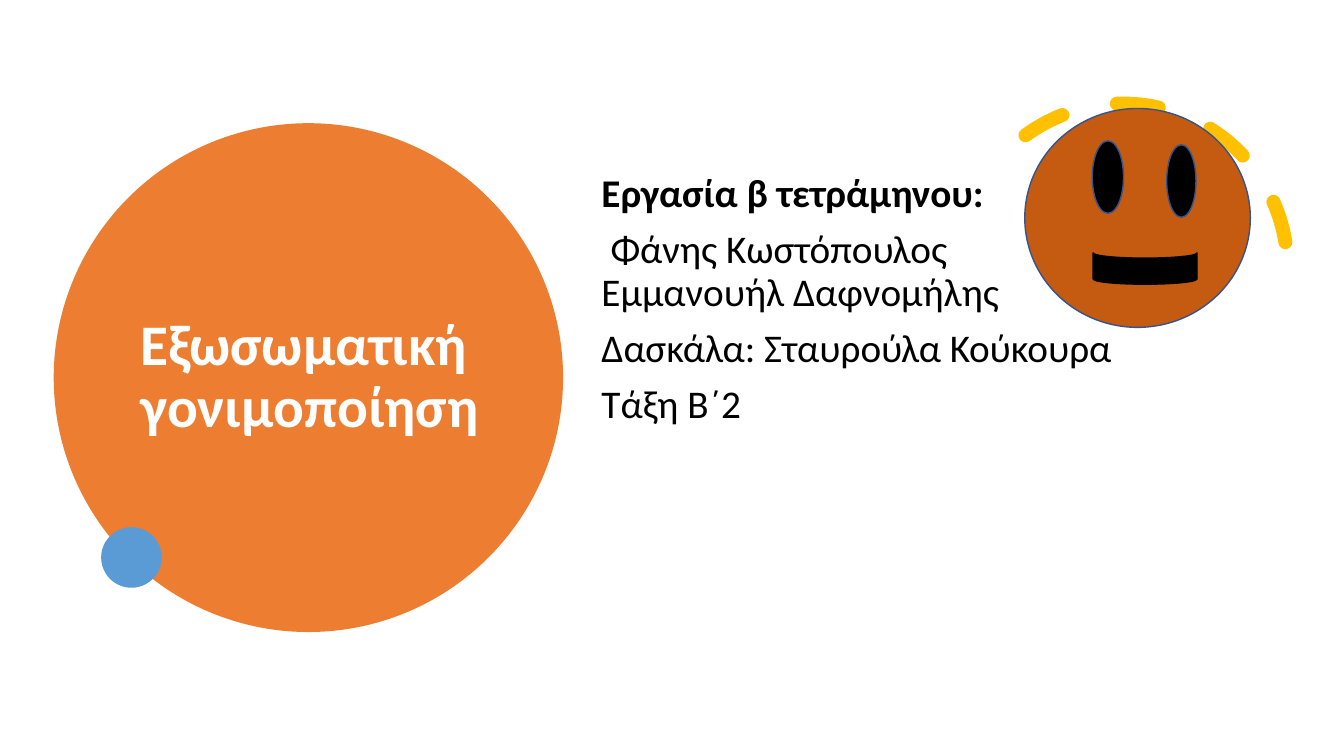
from dataclasses import dataclass

from lxml.etree import SubElement
from pptx import Presentation
from pptx.dml.color import RGBColor
from pptx.enum.dml import MSO_LINE
from pptx.enum.shapes import MSO_SHAPE as Preset
from pptx.enum.text import MSO_ANCHOR, MSO_AUTO_SIZE, PP_ALIGN
from pptx.oxml.ns import qn
from pptx.util import Inches, Pt


@dataclass(frozen=True)
class Theme:
    font: str = "Calibri"
    title_size: int = 41
    body_size: int = 28
    line_spacing: float = 0.9
    paragraph_gap: int = 10
    white: str = "FFFFFF"
    black: str = "000000"
    orange: str = "ED7D31"
    blue: str = "5B9BD5"
    gold: str = "FFC000"
    brown: str = "C55A11"
    outline: str = "325491"


@dataclass(frozen=True)
class Box:
    left: float
    top: float
    width: float
    height: float

    def share(self, x, y, w, h):
        return Box(self.left + x * self.width / 100, self.top + y * self.height / 100,
                   w * self.width / 100, h * self.height / 100)

    def lengths(self):
        return [Inches(v) for v in (self.left, self.top, self.width, self.height)]


THEME = Theme()
PAGE = Box(0, 0, 13.33, 7.5)


def rgb(code):
    return RGBColor.from_string(code)


def add_figure(slide, preset, box, fill=None, line=None, width=1):
    figure = slide.shapes.add_shape(preset, *box.lengths())
    figure.shadow.inherit = False
    if fill:
        figure.fill.solid()
        figure.fill.fore_color.rgb = rgb(fill)
    else:
        figure.fill.background()
    if line:
        figure.line.color.rgb = rgb(line)
        figure.line.width = Pt(width)
    else:
        figure.line.fill.background()
    return figure


def place_text(placeholder, box, anchor):
    placeholder.left, placeholder.top, placeholder.width, placeholder.height = box.lengths()
    frame = placeholder.text_frame
    frame.word_wrap = True
    frame.auto_size = MSO_AUTO_SIZE.NONE
    frame.vertical_anchor = anchor
    return frame


def add_run(paragraph, text, size, color, bold):
    run = paragraph.add_run()
    run.text = text
    run.font.name = THEME.font
    run.font.size = Pt(size)
    run.font.bold = bold
    run.font.color.rgb = rgb(color)


def build_title(slide, box):
    disc = add_figure(slide, Preset.OVAL, box, THEME.orange)
    title = slide.shapes.title
    title.element.addprevious(disc.element)
    add_figure(slide, Preset.OVAL, box.share(9.3, 79.4, 11.9, 11.9), THEME.blue)
    frame = place_text(title, box.share(15, 6, 75.7, 88.2), MSO_ANCHOR.MIDDLE)
    heading = frame.paragraphs[0]
    heading.alignment = PP_ALIGN.LEFT
    heading.line_spacing = THEME.line_spacing
    add_run(heading, "Εξωσωματική γονιμοποίηση", THEME.title_size, THEME.white, True)


def build_credits(slide, box):
    credits = [
        (["Εργασία β τετράμηνου:"], True, 0),
        (["Φάνης Κωστόπουλος", "Εμμανουήλ Δαφνομήλης"], False, 0.09),
        (["Δασκάλα: Σταυρούλα Κούκουρα"], False, 0),
        (["Τάξη Β΄2"], False, 0),
    ]
    frame = place_text(slide.placeholders[1], box, MSO_ANCHOR.TOP)
    for index, (lines, bold, indent) in enumerate(credits):
        paragraph = frame.add_paragraph() if index else frame.paragraphs[0]
        paragraph.alignment = PP_ALIGN.LEFT
        paragraph.line_spacing = THEME.line_spacing
        paragraph.space_before = Pt(THEME.paragraph_gap if index else 0)
        properties = paragraph._p.get_or_add_pPr()
        properties.set("marL", "0")
        properties.set("indent", str(Inches(indent)))
        SubElement(properties, qn("a:buNone"))
        for number, line in enumerate(lines):
            if number:
                paragraph.add_line_break()
            add_run(paragraph, line, THEME.body_size, THEME.black, bold)


def build_face(slide, box):
    hair = add_figure(slide, Preset.ARC, box, line=THEME.gold, width=10)
    hair.adjustments[0] = 158.17
    hair.adjustments[1] = 17.81
    hair.rotation = 330.2
    hair.line.dash_style = MSO_LINE.DASH
    hair.line._ln.set("cap", "rnd")

    add_figure(slide, Preset.OVAL, box.share(20.2, 1.5, 68.5, 66.4),
               THEME.brown, THEME.outline)
    for x, y, width in ((40.7, 11.3, 9.5), (63.3, 12.5, 8.9)):
        add_figure(slide, Preset.OVAL, box.share(x, y, width, 22),
                   THEME.black, THEME.outline)
    mouth = add_figure(slide, Preset.FLOWCHART_STORED_DATA,
                       box.share(52, 34.3, 9.5, 31.5), THEME.black, THEME.black)
    mouth.rotation = 270


def main():
    deck = Presentation()
    deck.slide_width, deck.slide_height = Inches(PAGE.width), Inches(PAGE.height)
    slide = deck.slides.add_slide(deck.slide_layouts[1])
    slide.background.fill.solid()
    slide.background.fill.fore_color.rgb = rgb(THEME.white)
    build_title(slide, PAGE.share(4, 16.3, 37.9, 67.3))
    build_credits(slide, PAGE.share(44, 22.3, 45.4, 57.3))
    build_face(slide, PAGE.share(71.3, 13.7, 24.5, 43.6))
    deck.save("out.pptx")


if __name__ == "__main__":
    main()
